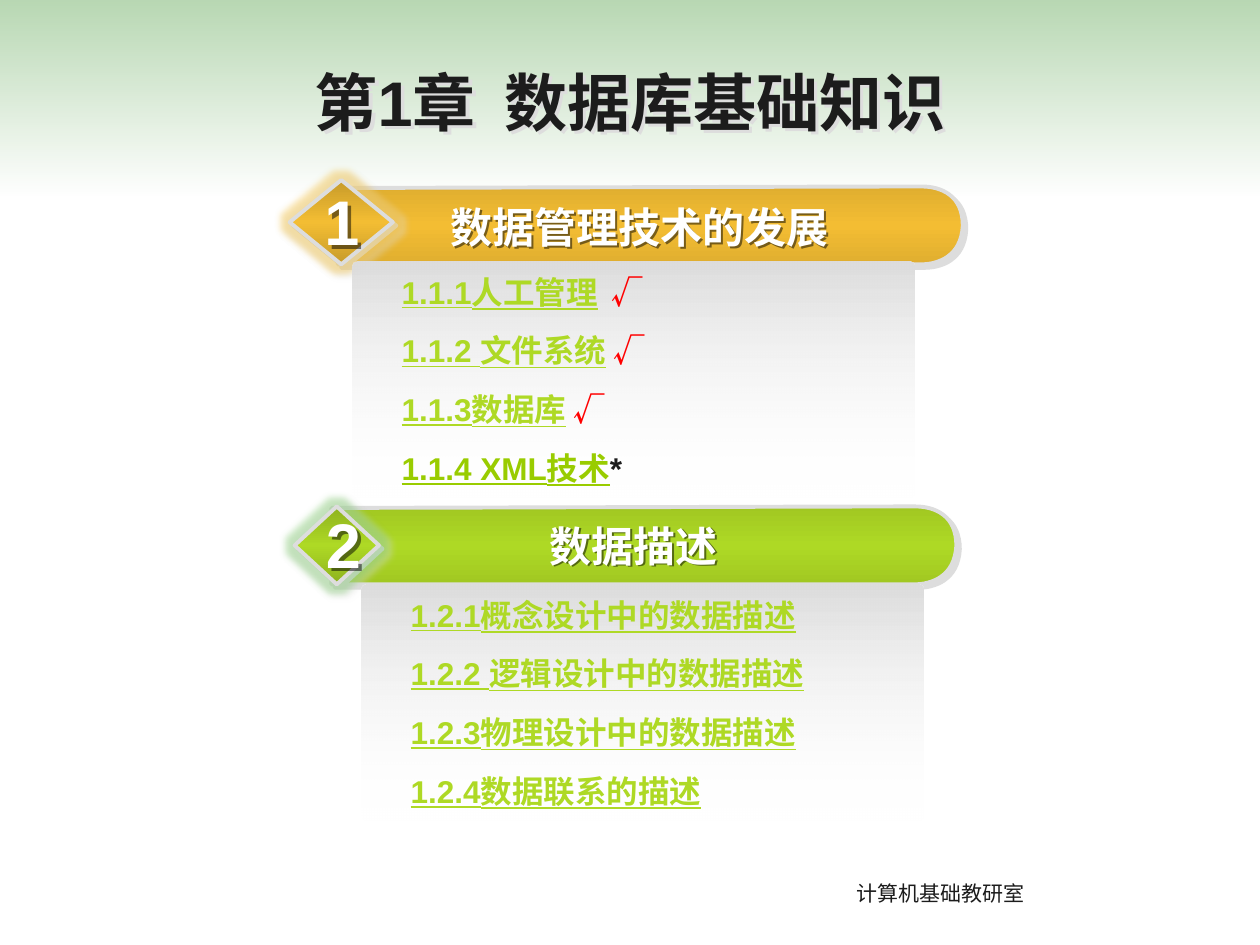
from lxml import etree
from pptx import Presentation
from pptx.dml.color import RGBColor
from pptx.enum.shapes import MSO_SHAPE
from pptx.enum.text import MSO_ANCHOR, PP_ALIGN
from pptx.oxml.ns import qn
from pptx.util import Cm, Pt

RECTANGLE = MSO_SHAPE.RECTANGLE
DIAMOND = MSO_SHAPE.DIAMOND
ROUNDED = MSO_SHAPE.ROUNDED_RECTANGLE
MIDDLE = MSO_ANCHOR.MIDDLE
CENTER = PP_ALIGN.CENTER
LEFT = PP_ALIGN.LEFT

LATIN_FONT = "Arial"
CHINESE_FONT = "Noto Sans CJK JP"
INK, WHITE, SILVER, RED = "1C1C1C", "FFFFFF", "DDDDDD", "FF0000"
LIME, GRASS, AMBER = "AED925", "99CC00", "F3BD33"

BAR_START = (0, 0.03)
BAR_CORNER = (0, 1.57)
BAR_CURVES = [
    [(0.43, 1.57), (11.46, 1.57), (11.76, 1.57)],
    [(12.09, 1.57), (12.57, 1.42), (12.6, 0.79)],
    [(12.6, 0.18), (12.17, 0), (11.76, 0)],
    [(11.38, 0), (0.43, 0.03), (0, 0.03)],
]
CURVE_STEPS = 16

SECTIONS = [
    {
        "number": "1", "heading": "数据管理技术的发展",
        "color": AMBER, "bar_edge": "E0AE2F", "diamond_edge": "C79B2A", "glow": AMBER,
        "bar": (6.81, 3.76), "diamond": (5.84, 3.63, 2.08, 1.7),
        "heading_box": (7.92, 3.94, 9.96, 1.27), "number_box": (6.22, 3.56, 1.35, 1.8),
        "list_box": (7.11, 5.28, 11.33, 4.75),
        "topics": [
            [("1.1.1人工管理", LIME, True), ("  ", INK, False), ("√", RED, False)],
            [("1.1.2 文件系统", LIME, True), (" ", INK, False), ("√", RED, False)],
            [("1.1.3数据库", LIME, True), (" ", INK, False), ("√", RED, False)],
            [("1.1.4 XML技术", GRASS, True), ("*", INK, False)],
        ],
    },
    {
        "number": "2", "heading": "数据描述",
        "color": LIME, "bar_edge": "A1C822", "diamond_edge": "8EB21E", "glow": "7CC86A",
        "bar": (6.68, 10.21), "diamond": (5.94, 10.21, 1.7, 1.57),
        "heading_box": (7.8, 10.36, 9.96, 1.27), "number_box": (6.32, 10.06, 0.84, 1.78),
        "list_box": (7.29, 11.79, 11.33, 4.75),
        "topics": [
            [("1.2.1概念设计中的数据描述", LIME, True)],
            [("1.2.2 逻辑设计中的数据描述", LIME, True)],
            [("1.2.3物理设计中的数据描述", LIME, True)],
            [("1.2.4数据联系的描述", LIME, True)],
        ],
    },
]


def rgb(value):
    return RGBColor.from_string(value)


def lengths(values):
    return [Cm(value) for value in values]


def add_xml_color(parent, color, opacity=100):
    node = etree.SubElement(parent, qn("a:srgbClr"), val=color)
    if opacity < 100:
        etree.SubElement(node, qn("a:alpha"), val=str(opacity * 1000))


def set_gradient(shape, stops):
    shape.fill.gradient()
    shape.fill.gradient_angle = 270
    stop_list = shape._element.spPr.find(qn("a:gradFill")).find(qn("a:gsLst"))
    for old_stop in list(stop_list):
        stop_list.remove(old_stop)
    for position, color, opacity in stops:
        stop = etree.SubElement(stop_list, qn("a:gs"), pos=str(position * 1000))
        add_xml_color(stop, color, opacity)


def add_effects(shape, shadow_color, opacity=100, distance=2.8, glow_color=None):
    shape.shadow.inherit = False
    effects = shape._element.spPr.find(qn("a:effectLst"))
    if glow_color:
        glow = etree.SubElement(effects, qn("a:glow"), rad=str(Pt(8)))
        add_xml_color(glow, glow_color, 40)
    shadow = etree.SubElement(effects, qn("a:outerShdw"), blurRad="0",
                              dist=str(Pt(distance)), dir="2700000", algn="ctr")
    add_xml_color(shadow, shadow_color, opacity)


def add_run(paragraph, words, size, color, bold=True, underline=False, latin=LATIN_FONT):
    run = paragraph.add_run()
    run.text = words
    font = run.font
    font.size, font.bold, font.underline = Pt(size), bold, underline
    font.color.rgb = rgb(color)
    font.name = latin
    latin_node = font._element.find(qn("a:latin"))
    latin_node.addnext(etree.Element(qn("a:ea"), typeface=CHINESE_FONT))


def add_label(slide, box, words, size, color, align=CENTER, **style):
    label = slide.shapes.add_textbox(*lengths(box))
    label.text_frame.word_wrap = True
    paragraph = label.text_frame.paragraphs[0]
    paragraph.alignment = align
    add_run(paragraph, words, size, color, **style)
    return label


def add_panel(slide, preset, box, stops):
    panel = slide.shapes.add_shape(preset, *lengths(box))
    panel.shadow.inherit = False
    panel.line.fill.background()
    set_gradient(panel, stops)
    return panel


def finish_badge(badge, edge, color, glow=None):
    set_gradient(badge, [(0, edge, 100), (50, color, 100), (100, edge, 100)])
    badge.line.color.rgb = rgb(SILVER)
    badge.line.width = Pt(2.25)
    add_effects(badge, SILVER, glow_color=glow)


def bezier(start, first, second, end, t):
    weights = ((1 - t) ** 3, 3 * t * (1 - t) ** 2, 3 * t * t * (1 - t), t ** 3)
    return tuple(sum(w * p[axis] for w, p in zip(weights, (start, first, second, end)))
                 for axis in (0, 1))


def add_bar(slide, left, top):
    outline, start = [BAR_CORNER], BAR_CORNER
    for curve in BAR_CURVES:
        outline += [bezier(start, *curve, step / CURVE_STEPS) for step in range(1, CURVE_STEPS + 1)]
        start = curve[-1]
    points = [lengths((left + x, top + y)) for x, y in outline]
    builder = slide.shapes.build_freeform(*lengths((left + BAR_START[0], top + BAR_START[1])))
    builder.add_line_segments(points, close=True)
    return builder.convert_to_shape()


def add_topics(slide, box, topics):
    panel = add_panel(slide, ROUNDED, box, [(0, SILVER, 100), (100, WHITE, 0)])
    panel.adjustments[0] = 0.02
    frame = panel.text_frame
    frame.word_wrap = True
    frame.vertical_anchor = MIDDLE
    for index, topic in enumerate(topics):
        paragraph = frame.add_paragraph() if index else frame.paragraphs[0]
        paragraph.alignment = LEFT
        paragraph.space_before = Pt(12 if index else 0)
        paragraph._p.get_or_add_pPr().set("indent", str(Cm(0.71)))
        for words, color, underline in topic:
            add_run(paragraph, words, 18, color, underline=underline)


def add_section(slide, section):
    finish_badge(add_bar(slide, *section["bar"]), section["bar_edge"], section["color"])
    diamond = slide.shapes.add_shape(DIAMOND, *lengths(section["diamond"]))
    finish_badge(diamond, section["diamond_edge"], section["color"], section["glow"])
    for part, size, distance in (("heading", 24, 1.4), ("number", 36, 2.8)):
        label = add_label(slide, section[part + "_box"], section[part], size, WHITE)
        add_effects(label, "000000", 50, distance)
    add_topics(slide, section["list_box"], section["topics"])


def add_title(slide, words):
    title = slide.shapes.title
    title.left, title.top, title.width, title.height = lengths((0, 0.84, 25.4, 2.39))
    title.text_frame.vertical_anchor = MIDDLE
    paragraph = title.text_frame.paragraphs[0]
    paragraph.alignment = CENTER
    add_run(paragraph, words, 36, INK)
    add_effects(title, SILVER)


def add_header_band(slide):
    band = add_panel(slide, RECTANGLE, (0, 0, 25.4, 3.99), [(0, "4E9D41", 40), (100, WHITE, 40)])
    slide.shapes.title._element.addprevious(band._element)


def main():
    deck = Presentation()
    deck.slide_width, deck.slide_height = lengths((25.4, 19.05))
    slide = deck.slides.add_slide(deck.slide_layouts[5])
    add_header_band(slide)
    add_label(slide, (17.02, 17.63, 4.34, 0.76), "计算机基础教研室", 12, INK,
              align=LEFT, bold=False, latin=CHINESE_FONT)
    add_title(slide, "第1章  数据库基础知识")
    for section in SECTIONS:
        add_section(slide, section)
    deck.save("out.pptx")


if __name__ == "__main__":
    main()
